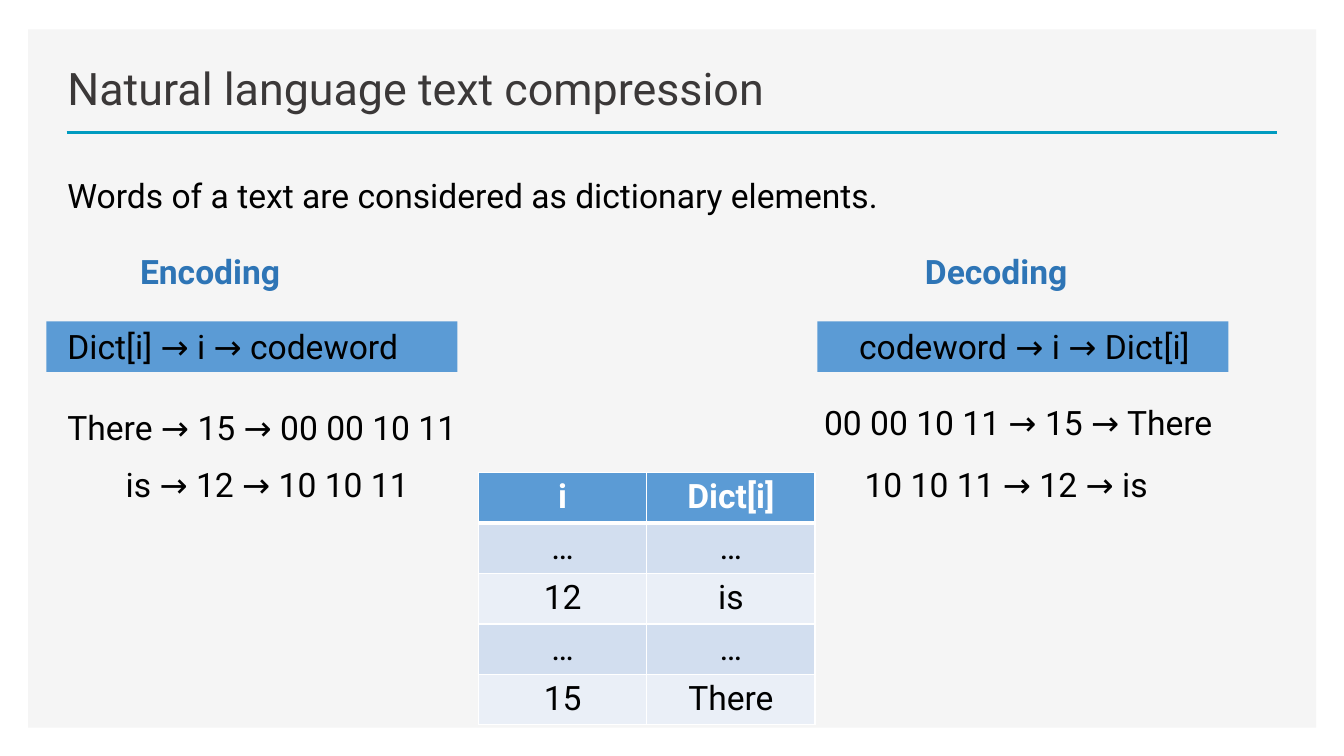
from dataclasses import dataclass

from lxml.etree import SubElement as Sub
from pptx import Presentation
from pptx.dml.color import RGBColor as Rgb
from pptx.enum.shapes import MSO_CONNECTOR as Conn, MSO_SHAPE as Geo
from pptx.enum.text import MSO_ANCHOR as Anchor, PP_ALIGN as Align
from pptx.oxml.ns import qn
from pptx.util import Cm, Pt


@dataclass(frozen=True)
class Theme:
    """Colours, font and type sizes of the slide."""
    font: str = "Roboto"
    panel: str = "F5F5F5"
    rule: str = "009BC0"
    bar: str = "5B9BD5"
    title: str = "3B3838"
    head: str = "2E75B6"
    ink: str = "000000"
    white: str = "FFFFFF"
    bands: tuple = ("D2DEEF", "EAEFF7")
    large: int = 32
    body: int = 24


class Deck:
    """Draws styled elements on the current slide."""

    def __init__(self, theme):
        """Open a deck with one blank slide."""
        self.theme = theme
        self.prs = Presentation()
        self.prs.slide_width, self.prs.slide_height = Cm(33.87), Cm(19.05)
        self.slide = self.prs.slides.add_slide(self.prs.slide_layouts[6])
        self.shapes = self.slide.shapes

    def run(self, para, text, color, size=None, bold=False):
        """Add one styled run to a paragraph."""
        run = para.add_run()
        run.text = text
        font = run.font
        font.name, font.size, font.bold = self.theme.font, Pt(size or self.theme.body), bold
        font.color.rgb = Rgb.from_string(color)

    def rect(self, x, y, wide, high, color):
        """Draw a plain filled rectangle."""
        box = self.shapes.add_shape(Geo.RECTANGLE, Cm(x), Cm(y), Cm(wide), Cm(high))
        box.shadow.inherit = False
        box.fill.solid()
        box.fill.fore_color.rgb = Rgb.from_string(color)
        box.line.fill.background()

    def rule(self, left, right, y):
        """Draw a level line."""
        line = self.shapes.add_connector(Conn.STRAIGHT, Cm(left), Cm(y), Cm(right), Cm(y))
        line.line.color.rgb = Rgb.from_string(self.theme.rule)
        line.line.width = Pt(2)
        Sub(line._element.spPr, qn("a:effectLst"))

    def text(self, x, y, wide, text, color=None, size=None, bold=False,
             high=1.27, anchor=Anchor.TOP):
        """Place a line of text in a box."""
        frame = self.shapes.add_textbox(Cm(x), Cm(y), Cm(wide), Cm(high)).text_frame
        frame.word_wrap = True
        frame.vertical_anchor = anchor
        self.run(frame.paragraphs[0], text, color or self.theme.ink, size, bold)

    def edge(self, cell, side, width):
        """Draw one white border of a cell."""
        line = Sub(cell._tc.get_or_add_tcPr(), qn(f"a:ln{side}"), w=str(Pt(width)))
        Sub(Sub(line, qn("a:solidFill")), qn("a:srgbClr"), val=self.theme.white)

    def table(self, x, y, col, row, data):
        """Draw a banded table with a header row."""
        look = self.theme
        count, span = len(data), len(data[0])
        grid = self.shapes.add_table(count, span, Cm(x), Cm(y),
                                     Cm(col * span), Cm(row * count)).table
        for r, line in enumerate(data):
            for c, word in enumerate(line):
                cell = grid.cell(r, c)
                for side in "LRTB":
                    thick = (r, side) in ((0, "B"), (1, "T"))
                    self.edge(cell, side, 3 if thick else 1)
                cell.fill.solid()
                fill = look.bands[(r - 1) % 2] if r else look.bar
                cell.fill.fore_color.rgb = Rgb.from_string(fill)
                para = cell.text_frame.paragraphs[0]
                para.alignment = Align.CENTER
                self.run(para, word, look.ink if r else look.white, bold=r == 0)


def main():
    """Build and save the slide."""
    look = Theme()
    deck = Deck(look)
    deck.rect(0.71, 0.74, 32.46, 17.6, look.panel)
    deck.rule(1.68, 32.18, 3.33)
    for x in (20.6, 1.17):
        deck.rect(x, 8.1, 10.36, 1.27, look.bar)
    deck.text(1.45, 1.24, 30.53, "Natural language text compression",
              look.title, look.large, high=1.78, anchor=Anchor.BOTTOM)
    deck.text(1.45, 4.29, 29.7, "Words of a text are considered as dictionary elements.")
    for x, head in ((3.28, "Encoding"), (23.06, "Decoding")):
        deck.text(x, 6.2, 5, head, look.head, bold=True)
    for x, y, step in (
        (1.45, 8.1, "Dict[i] → i → codeword"),
        (1.45, 10.13, "There → 15 → 00 00 10 11"),
        (2.92, 11.56, "is → 12 → 10 10 11"),
        (21.4, 8.1, "codeword → i → Dict[i]"),
        (20.52, 10.01, "00 00 10 11 → 15 → There"),
        (21.54, 11.56, "10 10 11 → 12 → is"),
    ):
        deck.text(x, y, 10.8, step)
    deck.table(12.06, 11.91, 4.24, 1.27, (
        ("i", "Dict[i]"), ("…", "…"), ("12", "is"), ("…", "…"), ("15", "There")))
    deck.prs.save("out.pptx")


if __name__ == "__main__":
    main()
